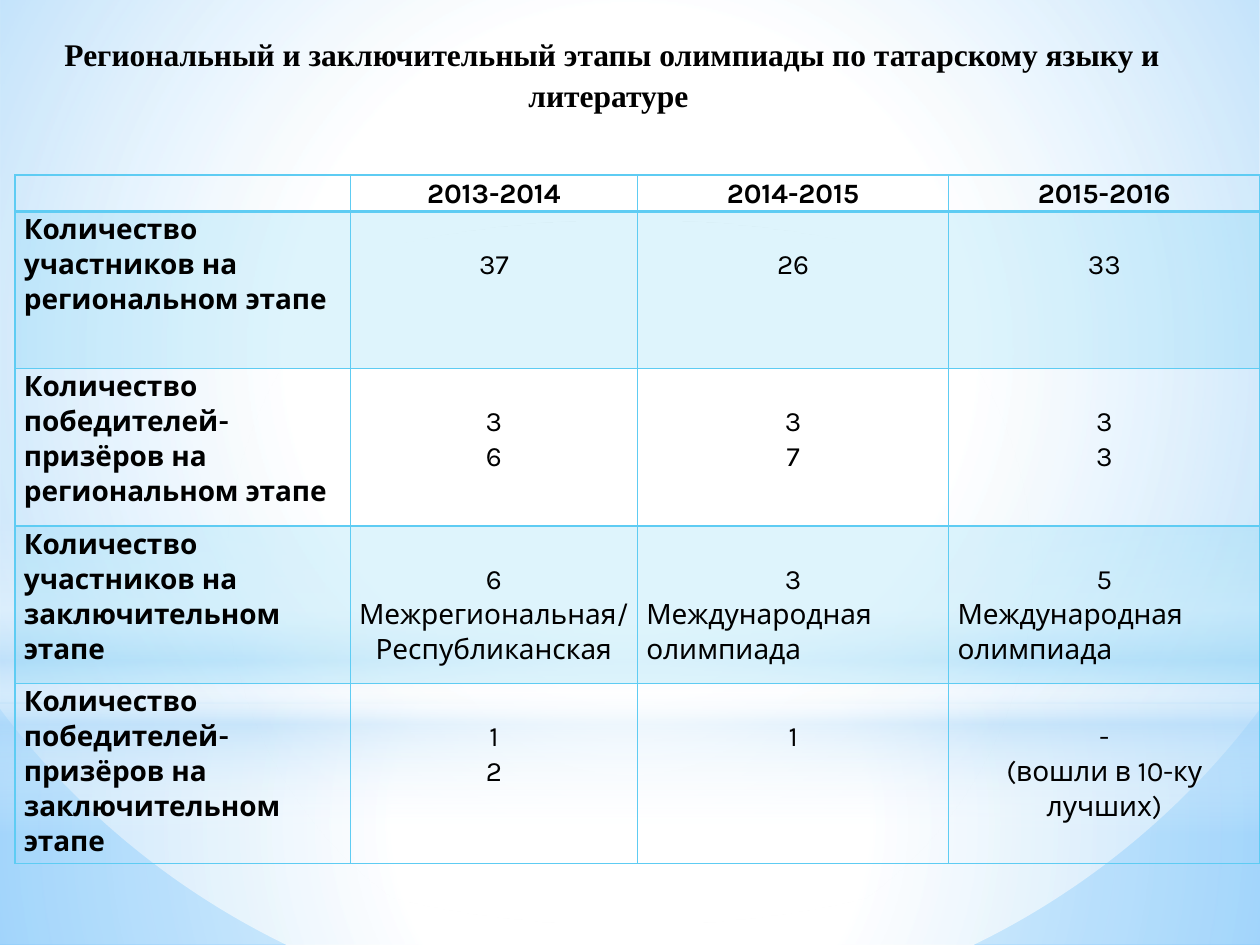
from pptx import Presentation
from pptx.dml.color import RGBColor
from pptx.enum.shapes import MSO_SHAPE
from pptx.enum.text import MSO_ANCHOR, MSO_AUTO_SIZE, PP_ALIGN
from pptx.oxml import parse_xml
from pptx.oxml.ns import nsdecls, qn
from pptx.util import Inches, Pt

BLACK = RGBColor(0x00, 0x00, 0x00)
AQUA = RGBColor(0x5E, 0xCC, 0xF3)
WHITE = RGBColor(0xFF, 0xFF, 0xFF)
PALE = RGBColor(0xB4, 0xDC, 0xFA)
SKY = RGBColor(0x5B, 0xB9, 0xFF)

# Content
TITLE = "Региональный и заключительный этапы олимпиады по татарскому языку и литературе "
YEARS = ["", "2013-2014", "2014-2015", "2015-2016"]
INTERNATIONAL = "Международная олимпиада"
LEFT_ALIGNED = {"Межрегиональная/", INTERNATIONAL}
RESULTS = [
    ("Количество участников на региональном этапе", [["37"], ["26"], ["33"]]),
    ("Количество победителей-призёров на региональном этапе",
     [["3", "6"], ["3", "7"], ["3", "3"]]),
    ("Количество участников на заключительном этапе",
     [["6", "Межрегиональная/", "Республиканская"],
      ["3", INTERNATIONAL], ["5", INTERNATIONAL]]),
    ("Количество победителей-призёров на заключительном этапе",
     [["1", "2"], ["1"], ["-", "(вошли в 10-ку лучших)"]]),
]
COLUMN_WIDTHS = [2.66, 2.28, 2.47, 2.47]
HEADER_HEIGHT, ROW_HEIGHT = 0.24, 1.25
TEXT_LINE = 0.28

# Backdrop: shape, box, gradient stops (position, colour, opacity), direction
CENTRE = (50, 50, 50, 50)
BACKGROUND_STOPS = [(0, WHITE, 100), (100, WHITE, 100), (100, SKY, 100)]
BACKDROP = [
    (MSO_SHAPE.RECTANGLE, (0, 5.58, 10, 1.92),
     [(0, WHITE, 91), (37, WHITE, 76), (100, PALE, 79)], CENTRE),
    (MSO_SHAPE.RECTANGLE, (0, 0, 10, 5.58),
     [(0, WHITE, 89), (48, WHITE, 62), (100, PALE, 79)], CENTRE),
    (MSO_SHAPE.RECTANGLE, (0, 4.12, 10, 2.5),
     [(0, WHITE, 0), (29, WHITE, 30), (45, PALE, 40), (55, WHITE, 26),
      (65, PALE, 60), (100, WHITE, 0)], 90),
    (MSO_SHAPE.OVAL, (0, 1.75, 10, 5.58),
     [(0, WHITE, 100), (56, WHITE, 0)], CENTRE),
]


def set_gradient(fill, properties, stops, direction):
    """Direction is an angle in degrees, or the focus box of a radial gradient."""
    fill.solid()
    stop_xml = "".join(
        f'<a:gs pos="{pos * 1000}"><a:srgbClr val="{colour}">'
        f'<a:alpha val="{opacity * 1000}"/></a:srgbClr></a:gs>'
        for pos, colour, opacity in stops)
    if isinstance(direction, tuple):
        l, t, r, b = (side * 1000 for side in direction)
        shade = (f'<a:path path="circle"><a:fillToRect l="{l}" t="{t}" '
                 f'r="{r}" b="{b}"/></a:path>')
    else:
        shade = f'<a:lin ang="{direction * 60000}" scaled="0"/>'
    gradient = parse_xml(f'<a:gradFill {nsdecls("a")} rotWithShape="1">'
                         f'<a:gsLst>{stop_xml}</a:gsLst>{shade}</a:gradFill>')
    properties.replace(properties.find(qn("a:solidFill")), gradient)


def set_borders(cell, top, bottom):
    widths = [("lnL", 1), ("lnR", 1), ("lnT", top), ("lnB", bottom)]
    for place, (side, width) in enumerate(widths):
        cell._tc.get_or_add_tcPr().insert(place, parse_xml(
            f'<a:{side} {nsdecls("a")} w="{Pt(width)}"><a:solidFill>'
            f'<a:srgbClr val="{AQUA}"/></a:solidFill></a:{side}>'))


def style(paragraph, font_name, size, bold, align):
    paragraph.alignment = align
    paragraph.line_spacing = 1.07
    paragraph.font.name = font_name
    paragraph.font.size = Pt(size)
    paragraph.font.bold = bold
    paragraph.font.color.rgb = BLACK


def fill_cell(cell, lines, bold, align, top_gap=0):
    cell.margin_left = cell.margin_right = Inches(0.07)
    cell.margin_top, cell.margin_bottom = Inches(top_gap), 0
    cell.text = "\n".join(lines)
    for paragraph, line in zip(cell.text_frame.paragraphs, lines):
        style(paragraph, "Karla", 16, bold,
              PP_ALIGN.LEFT if line in LEFT_ALIGNED else align)


def main():
    prs = Presentation()
    prs.slide_width, prs.slide_height = Inches(10), Inches(7.5)
    slide = prs.slides.add_slide(prs.slide_layouts[5])

    # Background and soft light shapes
    background = slide.background.fill
    background.solid()
    set_gradient(background, slide._element.find(".//" + qn("p:bgPr")),
                 BACKGROUND_STOPS, (20, 10, 20, 60))
    for kind, box, stops, direction in BACKDROP:
        glow = slide.shapes.add_shape(kind, *map(Inches, box))
        glow.shadow.inherit = False
        glow.line.fill.background()
        set_gradient(glow.fill, glow._element.spPr, stops, direction)

    # Title, brought in front of the backdrop
    title = slide.shapes.title
    slide.shapes._spTree.append(title._element)
    title.left, title.top = Inches(0), Inches(0.21)
    title.width, title.height = Inches(9.72), Inches(0.73)
    title.text = TITLE
    frame = title.text_frame
    frame.word_wrap = True
    frame.auto_size = MSO_AUTO_SIZE.SHAPE_TO_FIT_TEXT
    frame.vertical_anchor = MSO_ANCHOR.TOP
    style(frame.paragraphs[0], "Times New Roman", 18, True, PP_ALIGN.CENTER)
    frame.paragraphs[0].space_after = Pt(8)

    # Results table
    table = slide.shapes.add_table(
        len(RESULTS) + 1, len(YEARS), Inches(0.12), Inches(1.39),
        Inches(sum(COLUMN_WIDTHS)),
        Inches(HEADER_HEIGHT + ROW_HEIGHT * len(RESULTS))).table
    table.first_row = table.horz_banding = False
    for column, width in zip(table.columns, COLUMN_WIDTHS):
        column.width = Inches(width)
    for number, row in enumerate(table.rows):
        row.height = Inches(ROW_HEIGHT if number else HEADER_HEIGHT)
        for cell in row.cells:
            if number % 2:
                cell.fill.solid()
                cell.fill.fore_color.rgb = AQUA
                colour = cell._tc.tcPr.find(".//" + qn("a:srgbClr"))
                colour.append(parse_xml(f'<a:alpha {nsdecls("a")} val="20000"/>'))
            else:
                cell.fill.background()
            set_borders(cell, top=2 if number == 1 else 1,
                        bottom=2 if number == 0 else 1)

    for column, year in enumerate(YEARS):
        fill_cell(table.cell(0, column), [year], True, PP_ALIGN.CENTER)
    for number, (label, yearly) in enumerate(RESULTS, start=1):
        fill_cell(table.cell(number, 0), [label], True, PP_ALIGN.LEFT)
        for column, lines in enumerate(yearly, start=1):
            fill_cell(table.cell(number, column), lines, False,
                      PP_ALIGN.CENTER, TEXT_LINE)

    prs.save("out.pptx")


if __name__ == "__main__":
    main()
